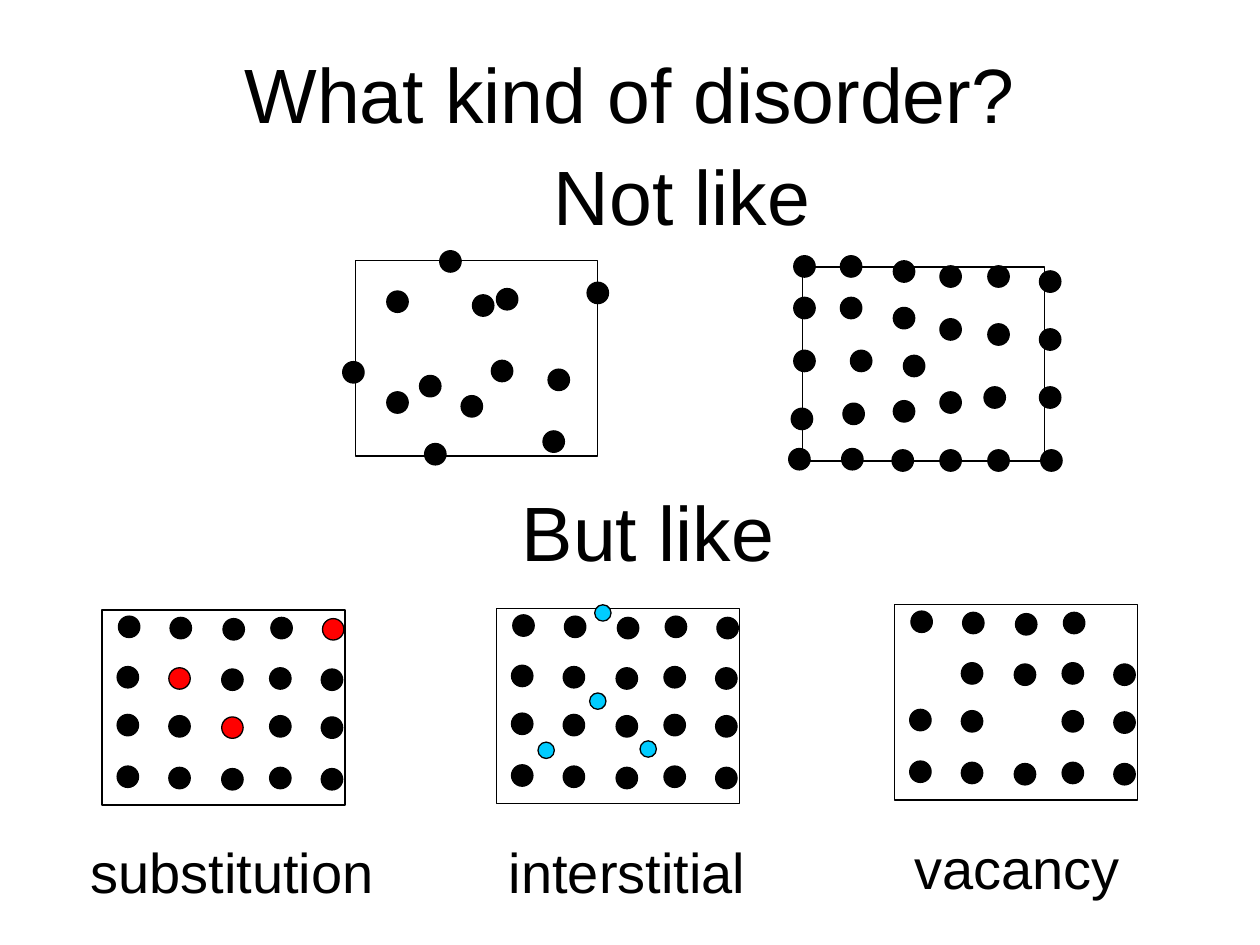
from pptx import Presentation, util as u
from pptx.dml.color import RGBColor
from pptx.enum import shapes, text

PX = 9144
BLACK, RED, CYAN = "000000", "FF0000", "00CCFF"
DOT, SMALL = 17, 13

TITLE = ("What kind of disorder?", 50, 11, 900, 125)
HEADS = [("Not like", 208, 113, 667, 83), ("But like", 27, 380, 975, 83)]
LABELS = [("substitution", 62, 660, 251, 63),
          ("interstitial", 394, 660, 216, 63),
          ("vacancy", 716, 657, 193, 63)]

LOOSE = [
    ((282, 207, 192, 155),
     [(307, 311), (333, 298), (307, 231), (366, 314), (375, 234),
      (435, 293), (394, 229), (431, 342), (390, 286), (466, 224),
      (272, 287), (337, 352), (349, 199)]),
    ((637, 212, 192, 154),
     [(630, 203), (667, 203), (709, 207), (746, 211), (784, 211), (825, 215),
      (630, 236), (667, 236), (709, 244), (746, 253), (784, 257), (825, 261),
      (630, 278), (675, 278), (717, 282),
      (628, 324), (669, 320), (709, 318), (746, 311), (781, 307), (825, 307),
      (626, 356), (668, 356), (708, 357), (746, 357), (784, 357), (826, 357)]),
]

COLS = [(12, 0), (53, 1), (95, 2), (133, 1), (174, 2)]
ROWS = [(1, 5), (0, 45), (0, 83), (0, 124)]
RED_AT = {(0, 4), (1, 1), (2, 2)}
GAPS = {(0, 4), (1, 0), (2, 2)}
EXTRA = [(468, 550), (427, 589), (508, 588), (472, 480)]
CRYSTALS = [((81, 484, 193, 155), RED_AT, set(), []),
            ((394, 483, 193, 155), set(), set(), EXTRA),
            ((710, 480, 193, 155), set(), GAPS, [])]


def rgb(code):
    return RGBColor.from_string(code)


def place(*box):
    return [u.Emu(v * PX) for v in box]


def style(para, size, align):
    para.alignment = align
    para.font.size = u.Pt(size)
    para.font.name = "Arial"
    para.font.color.rgb = rgb(BLACK)


def write(words, box, size, align):
    frame = slide.shapes.add_textbox(*place(*box)).text_frame
    frame.word_wrap = True
    frame.text = words
    style(frame.paragraphs[0], size, align)


def draw(group, kind, box, fill=None):
    shape = group.shapes.add_shape(kind, *place(*box))
    shape.shadow.inherit = False
    if fill:
        shape.fill.solid()
        shape.fill.fore_color.rgb = rgb(fill)
    else:
        shape.fill.background()
    shape.line.color.rgb = rgb(BLACK)
    shape.line.width = u.Pt(0.75)


def panel(box, dots):
    group = slide.shapes.add_group_shape()
    draw(group, shapes.MSO_SHAPE.RECTANGLE, box)
    for x, y, size, fill in dots:
        draw(group, shapes.MSO_SHAPE.OVAL, (x, y, size, size), fill)


deck = Presentation()
deck.slide_width, deck.slide_height = place(1000, 750)
slide = deck.slides.add_slide(deck.slide_layouts[5])

title = slide.shapes.title
title.left, title.top, title.width, title.height = place(*TITLE[1:])
title.text_frame.text = TITLE[0]
title.text_frame.vertical_anchor = text.MSO_ANCHOR.MIDDLE
style(title.text_frame.paragraphs[0], 44, text.PP_ALIGN.CENTER)

for words, *box in HEADS:
    write(words, box, 44, text.PP_ALIGN.CENTER)

for box, spots in LOOSE:
    panel(box, [(x, y, DOT, BLACK) for x, y in spots])

for box, reds, gaps, extra in CRYSTALS:
    dots = [(box[0] + x + dx, box[1] + y + dy, DOT,
             RED if (r, c) in reds else BLACK)
            for r, (dx, y) in enumerate(ROWS)
            for c, (x, dy) in enumerate(COLS) if (r, c) not in gaps]
    panel(box, dots + [(x, y, SMALL, CYAN) for x, y in extra])

for words, *box in LABELS:
    write(words, box, 32, text.PP_ALIGN.LEFT)

deck.save("out.pptx")
